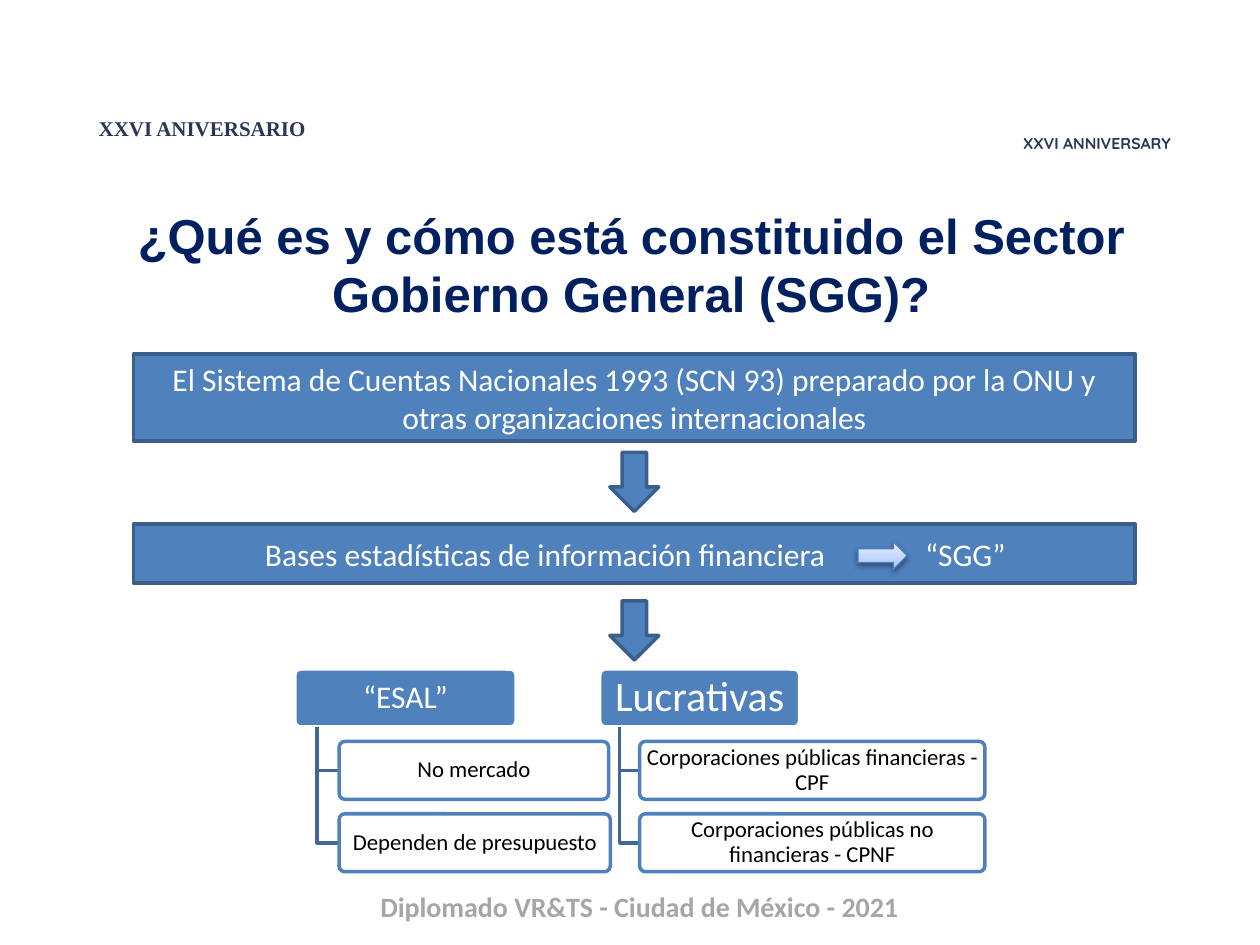
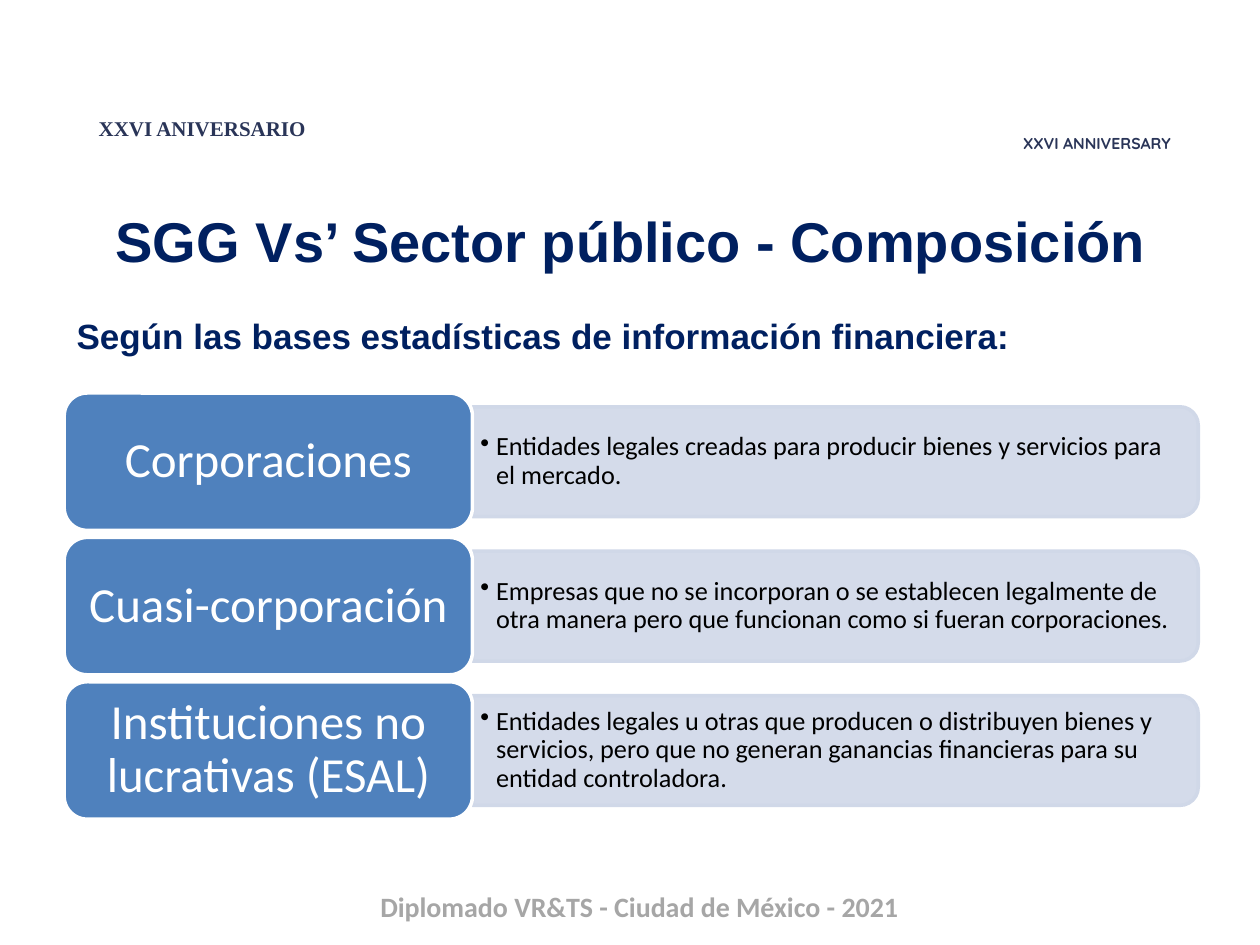
from lxml import etree
from pptx import Presentation
from pptx.dml.color import RGBColor
from pptx.enum import shapes, text
from pptx.oxml import parse_xml
from pptx.oxml import ns
from pptx.util import Pt

BLUE, EDGE, TRUNK, PALE = "4F81BD", "3A5F8C", "3F6797", "D0D8E8"
WHITE, BLACK, NAVY, SLATE, GREY = "FFFFFF", "000000", "002060", "2A3558", "A6A6A6"
SHAPE = shapes.MSO_SHAPE
CENTER, LEFT = text.PP_ALIGN.CENTER, text.PP_ALIGN.LEFT
MIDDLE, TOP = text.MSO_ANCHOR.MIDDLE, text.MSO_ANCHOR.TOP
DEFAULT_INSETS = (7.2, 3.6, 7.2, 3.6)
BANNERS = [
    ("Diplomado VR&TS - Ciudad de México - 2021", (115.9, 504.7, 499, 26.6), 16, "Calibri", GREY),
    ("XXVI ANIVERSARIO", (36.7, 62.6, 157.7, 21.8), 12, "Times New Roman", SLATE),
    ("XXVI ANNIVERSARY", (576, 72.7, 101.5, 18.2), 9, "Quicksand", SLATE),
]


def color(hex_value):
    return RGBColor.from_string(hex_value)


def lengths(box):
    return [Pt(value) for value in box]


def assign(target, **values):
    for name, value in values.items():
        setattr(target, name, value)


def write(shape, words, size, hex_value, font="Calibri", bold=False, align=CENTER,
          anchor=MIDDLE, insets=DEFAULT_INSETS, spacing=None):
    """Fill a shape with one formatted paragraph and return the paragraph."""
    frame = shape.text_frame
    left, top, right, bottom = lengths(insets)
    assign(frame, word_wrap=True, auto_size=text.MSO_AUTO_SIZE.NONE, vertical_anchor=anchor,
           margin_left=left, margin_top=top, margin_right=right, margin_bottom=bottom)
    paragraph = frame.paragraphs[0]
    assign(paragraph, alignment=align, line_spacing=spacing)
    run = paragraph.add_run()
    run.text = words
    assign(run.font, name=font, size=Pt(size), bold=bold)
    run.font.color.rgb = color(hex_value)
    return paragraph


def add_text(slide, box, *args, **values):
    return write(slide.shapes.add_textbox(*lengths(box)), *args, **values)


def add_block(slide, kind, box, fill=BLUE, line=EDGE, corner=None, opacity=None):
    shape = slide.shapes.add_shape(kind, *lengths(box))
    shape.shadow.inherit = False
    shape.fill.solid()
    shape.fill.fore_color.rgb = color(fill)
    shape.line.color.rgb = color(line)
    shape.line.width = Pt(2)
    if corner is not None:
        shape.adjustments[0] = corner
    if opacity is not None:
        fill_color = shape.element.spPr.find(ns.qn("a:solidFill"))[0]
        etree.SubElement(fill_color, ns.qn("a:alpha"), val=str(opacity * 1000))
    return shape


def add_banners(slide, layout):
    """Set the shared banners on the layout, so that every slide shows them."""
    for words, box, size, font, hex_value in BANNERS:
        banner = slide.shapes.add_textbox(*lengths(box))
        write(banner, words, size, hex_value, font, bold=True, anchor=TOP)
        layout.shapes.element.append(banner.element)


def add_title(slide, words, height, size):
    title = slide.shapes.title
    left, top, width, height = lengths((36.7, 105.8, 648, height))
    assign(title, left=left, top=top, width=width, height=height)
    write(title, words, size, NAVY, "Arial", bold=True)


def add_glossy_arrow(slide, box):
    """Right arrow with a pale gradient and a soft shadow."""
    arrow = add_block(slide, SHAPE.RIGHT_ARROW, box, line="4B7EBC")
    arrow.line.width = Pt(0.75)
    properties = arrow.element.spPr
    stops = "".join(f'<a:gs pos="{position * 1000}"><a:srgbClr val="{hex_value}"/></a:gs>'
                    for position, hex_value in ((0, "A4C4FF"), (35, "BFD4FF"), (100, "E6EEFF")))
    gradient = parse_xml(f'<a:gradFill {ns.nsdecls("a")} rotWithShape="1"><a:gsLst>{stops}</a:gsLst>'
                         '<a:lin ang="16200000" scaled="0"/></a:gradFill>')
    properties.replace(properties.find(ns.qn("a:solidFill")), gradient)
    properties.find(ns.qn("a:effectLst")).append(parse_xml(
        f'<a:outerShdw {ns.nsdecls("a")} blurRad="{Pt(3.1)}" dist="{Pt(1.6)}" dir="5400000" '
        'rotWithShape="0"><a:srgbClr val="000000"><a:alpha val="38000"/></a:srgbClr></a:outerShdw>'))


def add_flow(slide, left, top, width):
    """Two full-width steps, each followed by a down arrow."""
    source = add_block(slide, SHAPE.FLOWCHART_PROCESS, (left, top, width, 49.7))
    write(source, "El Sistema de Cuentas Nacionales 1993 (SCN 93) preparado por la ONU y "
          "otras organizaciones internacionales", 18, WHITE)
    bases = add_block(slide, SHAPE.RECTANGLE, (left, top + 97.2, width, 33.8))
    paragraph = write(bases, "Bases estadísticas de información financiera\t“SGG”", 18, WHITE,
                      align=LEFT, insets=(75.1, 3.6, 0, 3.6))
    tabs = etree.SubElement(paragraph._p.get_or_add_pPr(), ns.qn("a:tabLst"))
    etree.SubElement(tabs, ns.qn("a:tab"), pos=str(Pt(377.2)), algn="l")
    for offset in (56.2, 141.1):
        add_block(slide, SHAPE.DOWN_ARROW, (left + width / 2 - 14, top + offset, 28, 33.8))
    add_glossy_arrow(slide, (left + 414, top + 107.3, 28.1, 15.8))


def add_branch(slide, left, top, width, heading, size, leaves):
    """Heading with leaves hanging from a trunk at a tenth of its width."""
    height = 33.1
    head = add_block(slide, SHAPE.ROUNDED_RECTANGLE, (left, top, width, height), line=WHITE, corner=0.1)
    write(head, heading, size, WHITE, insets=(3, 2, 3, 2), spacing=0.9)
    trunk, leaf_left = left + 0.1 * width, left + 0.2 * width
    for row, (words, leaf_width) in enumerate(leaves, 1):
        leaf_top = top + row * 1.25 * height
        middle = leaf_top + height / 2
        builder = slide.shapes.build_freeform(Pt(trunk), Pt(top + height))
        builder.add_line_segments([lengths((trunk, middle)), lengths((leaf_left, middle))], close=False)
        link = builder.convert_to_shape()
        link.shadow.inherit = False
        link.fill.background()
        link.line.color.rgb = color(TRUNK)
        link.line.width = Pt(2)
        leaf = add_block(slide, SHAPE.ROUNDED_RECTANGLE, (leaf_left, leaf_top, leaf_width, height),
                         fill=WHITE, line=BLUE, corner=0.1, opacity=90)
        write(leaf, words, 13, BLACK, insets=(2, 1.5, 2, 1.5), spacing=0.9)


def add_definitions(slide, left, top, width, definitions):
    """Rows of a term and its meaning, the term taking 36% of the width."""
    height, pitch = 78.5, 82.5
    term_width, bar_height = 0.36 * width, 0.8 * height
    bar_left, bar_width = left + term_width, width - term_width
    for row, (term, meaning) in enumerate(definitions):
        row_top = top + row * pitch
        middle = row_top + height / 2
        upright = (bar_left + (bar_width - bar_height) / 2, middle - bar_width / 2, bar_height, bar_width)
        bar = add_block(slide, SHAPE.ROUND_2_SAME_RECTANGLE, upright, fill=PALE, line=PALE, opacity=90)
        bar.rotation = 90
        paragraph = add_text(slide, (bar_left, middle - 28.4, bar_width - 3, 56.8), meaning, 15, BLACK,
                             align=LEFT, insets=(4.5, 2.2, 4.5, 2.2), spacing=0.9)
        properties = paragraph._p.get_or_add_pPr()
        properties.set("marL", str(Pt(9)))
        properties.set("indent", str(Pt(-9)))
        etree.SubElement(properties, ns.qn("a:buChar"), char="•")
        box = add_block(slide, SHAPE.ROUNDED_RECTANGLE, (left, row_top, term_width, height), line=WHITE)
        write(box, term, 28, WHITE, insets=(8.4, 4.2, 8.4, 4.2), spacing=0.9)


def build_sector_slide(slide):
    add_title(slide, "¿Qué es y cómo está constituido el Sector Gobierno General (SGG)?", 90, 28)
    add_flow(slide, 76.3, 202.3, 572.4)
    add_branch(slide, 168.5, 382.3, 126.4, "“ESAL”", 18,
               [("No mercado", 154), ("Dependen de presupuesto", 155)])
    add_branch(slide, 342.7, 382.3, 114.2, "Lucrativas", 24,
               [("Corporaciones públicas financieras - CPF", 197.3),
                ("Corporaciones públicas no financieras - CPNF", 197.3)])


def build_composition_slide(slide):
    add_title(slide, "SGG Vs’ Sector público - Composición", 62.6, 32)
    add_text(slide, (36.7, 176.4, 648, 31.7), "Según las bases estadísticas de información financiera:",
             20, NAVY, "Arial", bold=True, align=LEFT, anchor=TOP)
    add_definitions(slide, 36.7, 224.6, 648, [
        ("Corporaciones", "Entidades legales creadas para producir bienes y servicios para el mercado."),
        ("Cuasi-corporación", "Empresas que no se incorporan o se establecen legalmente de otra manera "
         "pero que funcionan como si fueran corporaciones."),
        ("Instituciones no lucrativas (ESAL)", "Entidades legales u otras que producen o distribuyen "
         "bienes y servicios, pero que no generan ganancias financieras para su entidad controladora."),
    ])


def main():
    presentation = Presentation()
    assign(presentation, slide_width=Pt(720), slide_height=Pt(540))
    layout = presentation.slide_layouts.get_by_name("Title Only")
    sector, composition = [presentation.slides.add_slide(layout) for _ in range(2)]
    add_banners(sector, layout)
    build_sector_slide(sector)
    build_composition_slide(composition)
    presentation.save("out.pptx")


if __name__ == "__main__":
    main()
